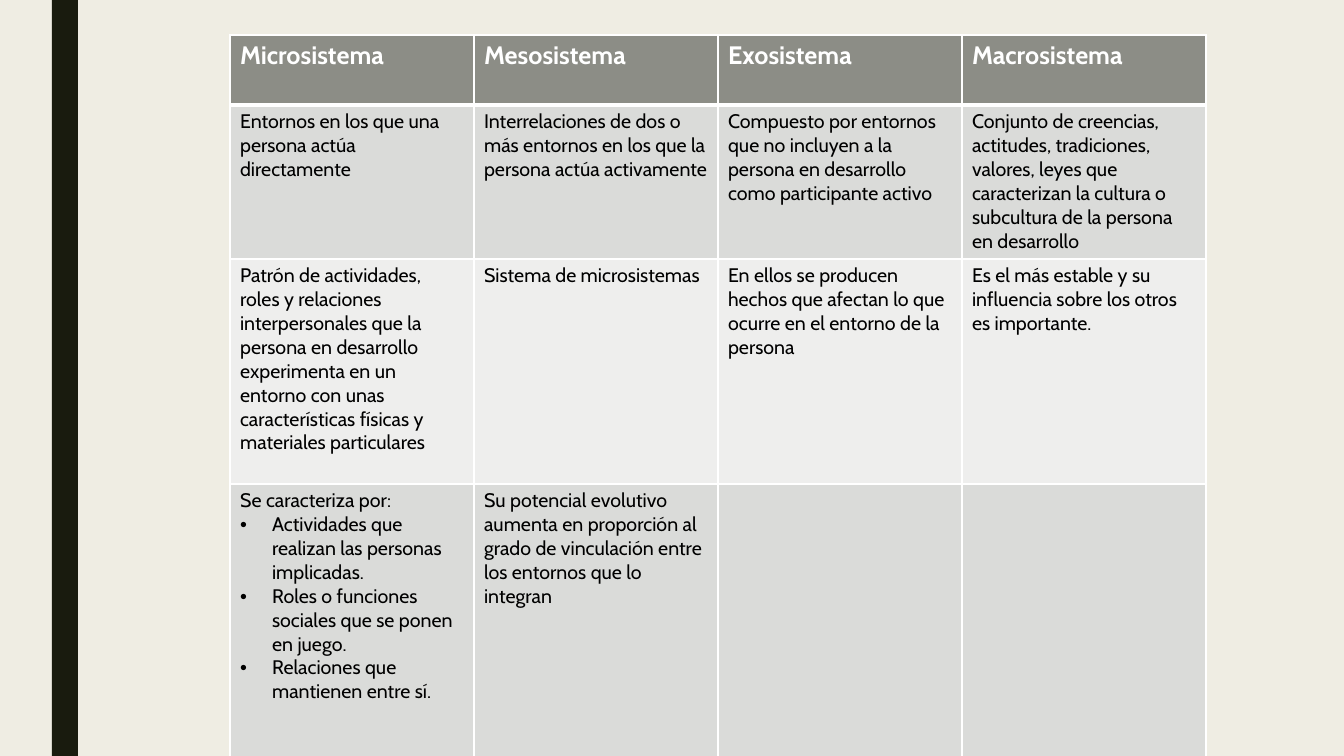
"""Build a slide with a table comparing four ecological systems."""
from lxml import etree
from pptx import Presentation
from pptx.dml.color import RGBColor
from pptx.enum.shapes import MSO_SHAPE
from pptx.oxml.ns import qn
from pptx.util import Emu, Pt

RECTANGLE = MSO_SHAPE.RECTANGLE
FONT = "Cabin"
CREAM = RGBColor(0xEF, 0xED, 0xE3)
DARK = RGBColor(0x19, 0x1B, 0x0E)
GRAY = RGBColor(0x8C, 0x8D, 0x86)
BAND = RGBColor(0xDA, 0xDB, 0xD9)
PALE = RGBColor(0xEE, 0xEE, 0xED)
WHITE = RGBColor(0xFF, 0xFF, 0xFF)
BLACK = RGBColor(0x00, 0x00, 0x00)

BULLET = "•"
ROWS = [
    ["Microsistema", "Mesosistema", "Exosistema", "Macrosistema"],
    [
        "Entornos en los que una persona actúa directamente",
        "Interrelaciones de dos o más entornos en los que la persona actúa activamente",
        "Compuesto por entornos que no incluyen a la persona en desarrollo "
        "como participante activo",
        "Conjunto de creencias, actitudes, tradiciones, valores, leyes que "
        "caracterizan la cultura o subcultura de la persona en desarrollo",
    ],
    [
        "Patrón de actividades, roles y relaciones interpersonales que la persona "
        "en desarrollo experimenta en un entorno con unas características físicas "
        "y materiales particulares",
        "Sistema de microsistemas",
        "En ellos se producen hechos que afectan lo que ocurre en el entorno de la persona",
        "Es el más estable y su influencia sobre los otros es importante.",
    ],
    [
        ("Se caracteriza por:", [
            "Actividades que realizan las personas implicadas.",
            "Roles o funciones sociales que se ponen en juego.",
            "Relaciones que mantienen entre sí.",
        ]),
        "Su potencial evolutivo aumenta en proporción al grado de vinculación "
        "entre los entornos que lo integran",
        "",
        "",
    ],
]
ROW_HEIGHTS = [70, 154, 225, 274]
ROW_FILLS = [GRAY, BAND, PALE, BAND]
COLUMN_WIDTH = 244
TABLE_LEFT, TABLE_TOP = 230, 35
PAGE_WIDTH, PAGE_HEIGHT = 1344, 756
STRIPE_LEFT, STRIPE_WIDTH = 52, 26
BULLET_INDENT = 32


def px(length):
    return Emu(round(length * 914400 / 100.8))


def write_paragraph(para, text, size=14, color=BLACK, bold=False, bullet=False):
    span = para.add_run()
    span.text = text
    span.font.name = FONT
    span.font.size = Pt(size)
    span.font.bold = bold
    span.font.color.rgb = color
    if bullet:
        properties = para._p.get_or_add_pPr()
        properties.set("marL", str(px(BULLET_INDENT)))
        properties.set("indent", str(-px(BULLET_INDENT)))
        etree.SubElement(properties, qn("a:buFont"), typeface="Arial")
        etree.SubElement(properties, qn("a:buChar"), char=BULLET)


def add_border(cell, side, points):
    properties = cell._tc.get_or_add_tcPr()
    line = etree.SubElement(properties, qn(f"a:ln{side}"), w=str(Pt(points)))
    fill = etree.SubElement(line, qn("a:solidFill"))
    etree.SubElement(fill, qn("a:srgbClr"), val=str(WHITE))


def fill_cell(cell, content, row):
    header = row == 0
    widths = {"L": 1, "R": 1, "T": 3 if row == 1 else 1, "B": 3 if header else 1}
    for side, points in widths.items():
        add_border(cell, side, points)
    cell.fill.solid()
    cell.fill.fore_color.rgb = ROW_FILLS[row]
    if not content:
        return
    lead, items = content if isinstance(content, tuple) else (content, [])
    style = {"size": 18, "color": WHITE, "bold": True} if header else {}
    frame = cell.text_frame
    write_paragraph(frame.paragraphs[0], lead, **style)
    for item in items:
        write_paragraph(frame.add_paragraph(), item, bullet=True)


def add_stripe(page):
    stripe = page.shapes.add_shape(
        RECTANGLE, px(STRIPE_LEFT), 0, px(STRIPE_WIDTH), px(PAGE_HEIGHT))
    stripe.shadow.inherit = False
    stripe.fill.solid()
    stripe.fill.fore_color.rgb = DARK
    stripe.line.fill.background()


def add_systems_table(page):
    columns = len(ROWS[0])
    table = page.shapes.add_table(
        len(ROWS), columns, px(TABLE_LEFT), px(TABLE_TOP),
        px(COLUMN_WIDTH * columns), px(sum(ROW_HEIGHTS))).table
    table.first_row = False
    table.horz_banding = False
    for column in table.columns:
        column.width = px(COLUMN_WIDTH)
    for row, contents in enumerate(ROWS):
        table.rows[row].height = px(ROW_HEIGHTS[row])
        for column, content in enumerate(contents):
            fill_cell(table.cell(row, column), content, row)


def main():
    deck = Presentation()
    deck.slide_width, deck.slide_height = px(PAGE_WIDTH), px(PAGE_HEIGHT)
    page = deck.slides.add_slide(deck.slide_layouts[6])
    page.background.fill.solid()
    page.background.fill.fore_color.rgb = CREAM
    add_stripe(page)
    add_systems_table(page)
    deck.save("out.pptx")


if __name__ == "__main__":
    main()
